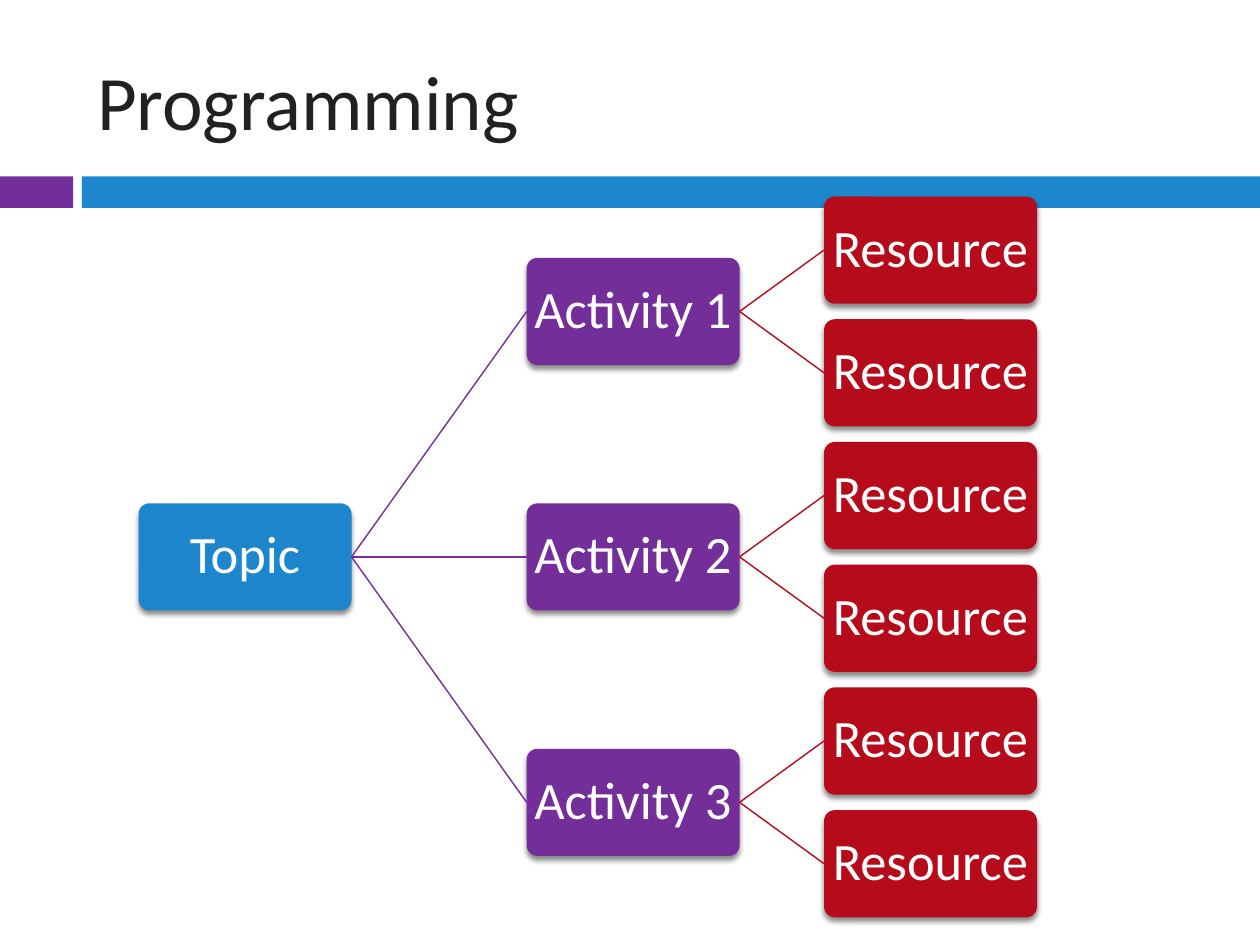
from dataclasses import dataclass

from lxml import etree
from pptx import Presentation
from pptx.dml.color import RGBColor
from pptx.enum.shapes import MSO_CONNECTOR, MSO_SHAPE
from pptx.enum.text import MSO_ANCHOR, PP_ALIGN
from pptx.oxml import parse_xml
from pptx.oxml.ns import nsdecls, qn
from pptx.util import Inches, Pt


@dataclass(frozen=True)
class Theme:
    blue: RGBColor = RGBColor.from_string("1D86CD")
    purple: RGBColor = RGBColor.from_string("732E9A")
    red: RGBColor = RGBColor.from_string("B50B1B")
    ink: RGBColor = RGBColor.from_string("212121")
    white: RGBColor = RGBColor.from_string("FFFFFF")
    font: str = "Calibri"
    title_size: Pt = Pt(44)
    node_size: Pt = Pt(30)
    line_width: Pt = Pt(0.79)


theme = Theme()
SHADOW = (
    f'<a:effectLst {nsdecls("a")}>'
    '<a:outerShdw blurRad="38100" dist="30480" dir="5400000" rotWithShape="0">'
    '<a:srgbClr val="000000"><a:alpha val="45000"/></a:srgbClr>'
    "</a:outerShdw></a:effectLst>"
)

presentation = Presentation()
presentation.slide_width, presentation.slide_height = Inches(10), Inches(7.5)
slide = presentation.slides.add_slide(presentation.slide_layouts[5])


def write(frame, text, *, size, color, align, spacing=1.0, inset=None):
    frame.word_wrap = True
    frame.vertical_anchor = MSO_ANCHOR.MIDDLE
    if inset is not None:
        frame.margin_left = frame.margin_right = inset
        frame.margin_top = frame.margin_bottom = inset
    paragraph = frame.paragraphs[0]
    paragraph.alignment = align
    paragraph.line_spacing = spacing
    run = paragraph.add_run()
    run.text = text
    run.font.name = theme.font
    run.font.size = size
    run.font.color.rgb = color


def add_node(text, left, top, color, parent=None):
    """Add a tree box and, if it has a parent, the line leading to it."""
    node = slide.shapes.add_shape(
        MSO_SHAPE.ROUNDED_RECTANGLE, Inches(left), Inches(top), Inches(1.69), Inches(0.85)
    )
    node.adjustments[0] = 0.1
    node.fill.solid()
    node.fill.fore_color.rgb = color
    node.line.fill.background()
    node._element.spPr.append(parse_xml(SHADOW))
    write(node.text_frame, text, size=theme.node_size, color=theme.white,
          align=PP_ALIGN.CENTER, spacing=0.9, inset=Inches(0.02))
    if parent is not None:
        branch = slide.shapes.add_connector(MSO_CONNECTOR.STRAIGHT, 0, 0, 0, 0)
        branch.begin_connect(parent, 3)
        branch.end_connect(node, 1)
        branch.line.color.rgb = color
        branch.line.width = theme.line_width
        etree.SubElement(branch._element.spPr, qn("a:effectLst"))
    return node


# Title
title = slide.shapes.title
title.left, title.top = Inches(0.67), Inches(0.25)
title.width, title.height = Inches(8.92), Inches(1.08)
write(title.text_frame, "Programming", size=theme.title_size,
      color=theme.ink, align=PP_ALIGN.LEFT)

# Band below the title
for left, width, color in ((0, 0.58, theme.purple), (0.65, 9.35, theme.blue)):
    band = slide.shapes.add_shape(
        MSO_SHAPE.RECTANGLE, Inches(left), Inches(1.4), Inches(width), Inches(0.25)
    )
    band.fill.solid()
    band.fill.fore_color.rgb = color
    band.line.fill.background()
    band.shadow.inherit = False

# Tree: each parent is centred on its children
topic_left, activity_left, resource_left = 1.1, 4.18, 6.54
first_top, last_top = 1.56, 6.43
activity_count, resources_each = 3, 2
step = (last_top - first_top) / (activity_count * resources_each - 1)

topic = add_node("Topic", topic_left, (first_top + last_top) / 2, theme.blue)
for index in range(activity_count):
    group_top = first_top + index * resources_each * step
    activity_top = group_top + (resources_each - 1) * step / 2
    activity = add_node(f"Activity {index + 1}", activity_left, activity_top,
                        theme.purple, parent=topic)
    for row in range(resources_each):
        add_node("Resource", resource_left, group_top + row * step,
                 theme.red, parent=activity)

presentation.save("out.pptx")
